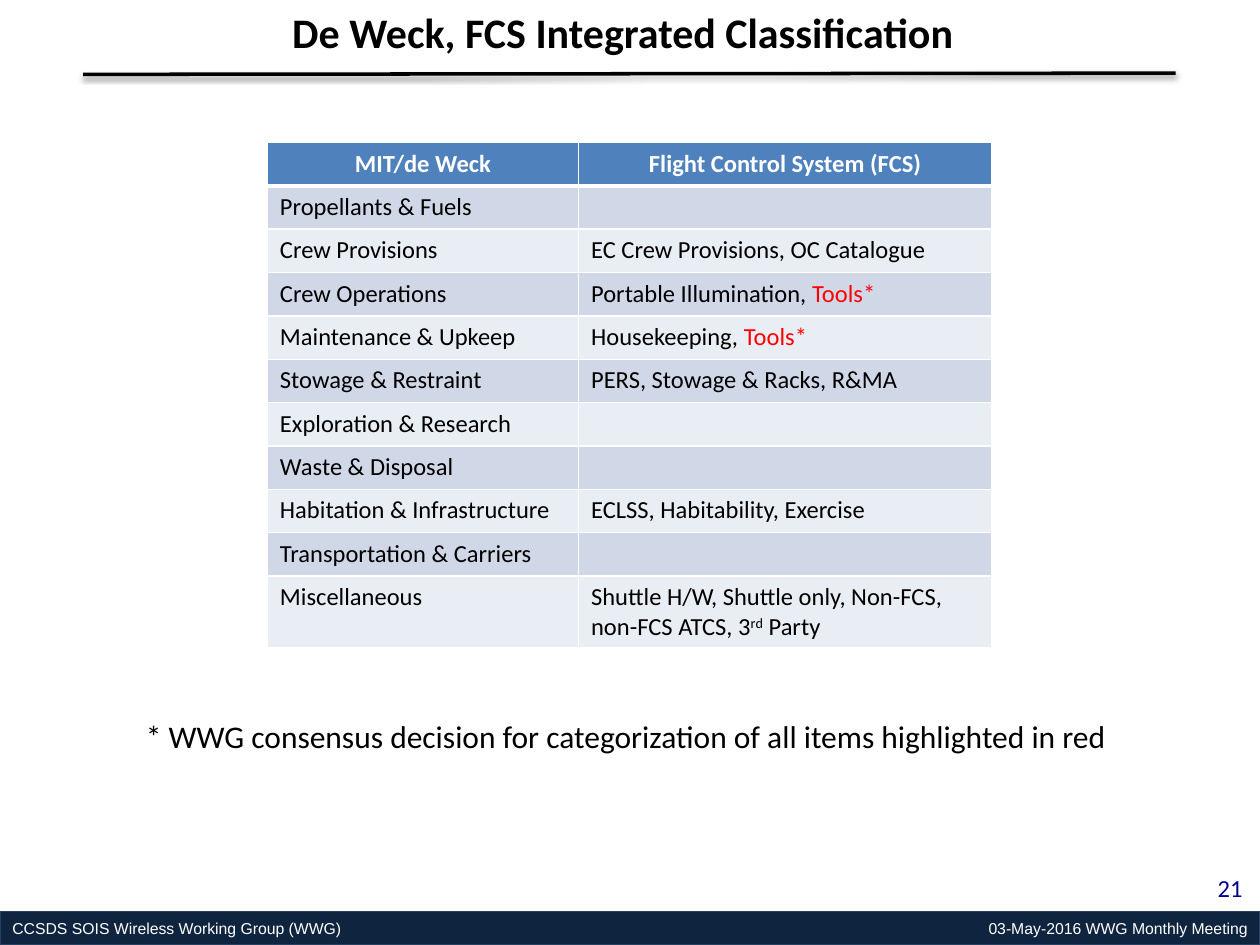
from lxml import etree
from pptx import Presentation
from pptx.dml.color import RGBColor
from pptx.enum.shapes import MSO_CONNECTOR, MSO_SHAPE
from pptx.enum.text import MSO_ANCHOR, PP_ALIGN
from pptx.oxml.ns import qn
from pptx.util import Pt

LEFT, CENTER, RIGHT = PP_ALIGN.LEFT, PP_ALIGN.CENTER, PP_ALIGN.RIGHT
TOP, MIDDLE = MSO_ANCHOR.TOP, MSO_ANCHOR.MIDDLE
STRAIGHT, RECTANGLE = MSO_CONNECTOR.STRAIGHT, MSO_SHAPE.RECTANGLE

BLACK = RGBColor(0x00, 0x00, 0x00)
WHITE = RGBColor(0xFF, 0xFF, 0xFF)
RED = RGBColor(0xFF, 0x00, 0x00)
NAVY = RGBColor(0x0F, 0x24, 0x3E)
NAVY_EDGE = RGBColor(0x25, 0x40, 0x61)
NUMBER_BLUE = RGBColor(0x00, 0x00, 0x90)
HEADER_BLUE = RGBColor(0x4F, 0x81, 0xBD)
BANDS = (RGBColor(0xD0, 0xD8, 0xE8), RGBColor(0xE9, 0xED, 0xF4))

TITLE_FONT = {"name": "Calibri", "size": Pt(24), "bold": True}
NOTE_FONT = {"name": "Calibri", "size": Pt(18), "bold": False}
NUMBER_FONT = {"name": "Calibri", "size": Pt(14), "bold": False}
HEADER_FONT = {"name": "Calibri", "size": Pt(14), "bold": True}
BODY_FONT = {"name": "Calibri", "size": Pt(14), "bold": False}
FOOTER_FONT = {"name": "Arial", "size": Pt(9), "bold": False}

HEADERS = ("MIT/de Weck", "Flight Control System (FCS)")
TOOLS = ("Tools*", RED, 0)
CATEGORIES = (
    ("Propellants & Fuels", ()),
    ("Crew Provisions", (("EC Crew Provisions, OC Catalogue", BLACK, 0),)),
    ("Crew Operations", (("Portable Illumination, ", BLACK, 0), TOOLS)),
    ("Maintenance & Upkeep", (("Housekeeping, ", BLACK, 0), TOOLS)),
    ("Stowage & Restraint", (("PERS, Stowage & Racks, R&MA", BLACK, 0),)),
    ("Exploration & Research", ()),
    ("Waste & Disposal", ()),
    ("Habitation & Infrastructure", (("ECLSS, Habitability, Exercise", BLACK, 0),)),
    ("Transportation & Carriers", ()),
    ("Miscellaneous", (
        ("Shuttle H/W, Shuttle only, Non-FCS, non-FCS ATCS, 3", BLACK, 0),
        ("rd", BLACK, 30000),
        (" Party", BLACK, 0),
    )),
)


def apply_format(target, values):
    """Set each named attribute on the target."""
    for name, value in values.items():
        setattr(target, name, value)


def write_runs(paragraph, runs, font_values, alignment=LEFT):
    """Fill a paragraph with (text, colour, baseline) runs."""
    paragraph.alignment = alignment
    for text, color, baseline in runs:
        run = paragraph.add_run()
        run.text = text
        apply_format(run.font, font_values)
        run.font.color.rgb = color
        if baseline:
            run.font._element.set("baseline", str(baseline))
    if not runs:
        size = str(int(font_values["size"].pt * 100))
        etree.SubElement(paragraph._p, qn("a:endParaRPr"), sz=size)


def write_frame(shape, text, font_values, color, alignment=LEFT, anchor=TOP, wrap=True):
    """Write one line of text into a shape."""
    apply_format(shape.text_frame, {"word_wrap": wrap, "vertical_anchor": anchor})
    write_runs(shape.text_frame.paragraphs[0], ((text, color, 0),), font_values, alignment)


def add_text(slide, box, text, font_values, color, **layout):
    """Add a text box in the given box."""
    shape = slide.shapes.add_textbox(*map(Pt, box))
    write_frame(shape, text, font_values, color, **layout)


def add_footer(slide, box, group, meeting):
    """Draw the footer band with a label at each end."""
    bar = slide.shapes.add_shape(RECTANGLE, *map(Pt, box))
    bar.shadow.inherit = False
    bar.fill.solid()
    bar.fill.fore_color.rgb = NAVY
    bar.line.color.rgb = NAVY_EDGE
    bar.line.width = Pt(0.75)
    write_frame(bar, group, FOOTER_FONT, WHITE, anchor=MIDDLE)
    left, top, width, height = box
    half = (left + width / 2, top, width / 2, height)
    add_text(slide, half, meeting, FOOTER_FONT, WHITE, alignment=RIGHT, anchor=MIDDLE)


def add_title(slide, box, text):
    """Place the title in its placeholder."""
    title = slide.shapes.title
    apply_format(title, dict(zip(("left", "top", "width", "height"), map(Pt, box))))
    write_frame(title, text, TITLE_FONT, BLACK, wrap=False)


def add_title_rule(slide, start, end):
    """Draw the shadowed rule below the title."""
    rule = slide.shapes.add_connector(STRAIGHT, *map(Pt, start + end))
    rule.line.color.rgb = BLACK
    rule.line.width = Pt(2)
    effects = etree.SubElement(rule._element.spPr, qn("a:effectLst"))
    shadow = etree.SubElement(
        effects, qn("a:outerShdw"), blurRad=str(Pt(3.1)), dist=str(Pt(1.6)),
        dir="5400000", rotWithShape="0")
    color = etree.SubElement(shadow, qn("a:srgbClr"), val=str(BLACK))
    etree.SubElement(color, qn("a:alpha"), val="38000")


def style_cell(cell, fill, bottom_width):
    """Give a cell white borders and a solid fill."""
    properties = cell._tc.get_or_add_tcPr()
    for side, width in (("L", 1), ("R", 1), ("T", 1), ("B", bottom_width)):
        border = etree.SubElement(properties, qn(f"a:ln{side}"), w=str(Pt(width)))
        solid = etree.SubElement(border, qn("a:solidFill"))
        etree.SubElement(solid, qn("a:srgbClr"), val=str(WHITE))
    cell.fill.solid()
    cell.fill.fore_color.rgb = fill


def add_classification_table(slide, box, column_widths):
    """Build the two-column classification table."""
    row_count = len(CATEGORIES) + 1
    table = slide.shapes.add_table(row_count, 2, *map(Pt, box)).table
    for column, width in zip(table.columns, column_widths):
        column.width = Pt(width)
    for row in table.rows:
        row.height = Pt(box[3] / row_count)
    for cell, text in zip(table.rows[0].cells, HEADERS):
        style_cell(cell, HEADER_BLUE, 3)
        write_runs(cell.text_frame.paragraphs[0], ((text, WHITE, 0),), HEADER_FONT, CENTER)
    for index, (category, systems) in enumerate(CATEGORIES):
        contents = (((category, BLACK, 0),), systems)
        for cell, runs in zip(table.rows[index + 1].cells, contents):
            style_cell(cell, BANDS[index % 2], 1)
            write_runs(cell.text_frame.paragraphs[0], runs, BODY_FONT)


def main():
    """Build and save the slide."""
    presentation = Presentation()
    presentation.slide_width, presentation.slide_height = Pt(720), Pt(540)
    slide = presentation.slides.add_slide(presentation.slide_layouts[5])
    add_footer(slide, (0, 521, 720, 19),
               "CCSDS SOIS Wireless Working Group (WWG)", "03-May-2016 WWG Monthly Meeting")
    add_text(slide, (669.6, 495.4, 47.5, 25), "21", NUMBER_FONT, NUMBER_BLUE, alignment=RIGHT)
    add_title(slide, (159.8, 0, 399, 36), "De Weck, FCS Integrated Classification")
    add_title_rule(slide, (47.5, 42.5), (671.8, 41.8))
    add_classification_table(slide, (152.8, 81.4, 414, 272.8), (177.8, 236.2))
    add_text(slide, (76.3, 406.1, 567.4, 29),
             "* WWG consensus decision for categorization of all items highlighted in red",
             NOTE_FONT, BLACK, wrap=False)
    presentation.save("out.pptx")


if __name__ == "__main__":
    main()
